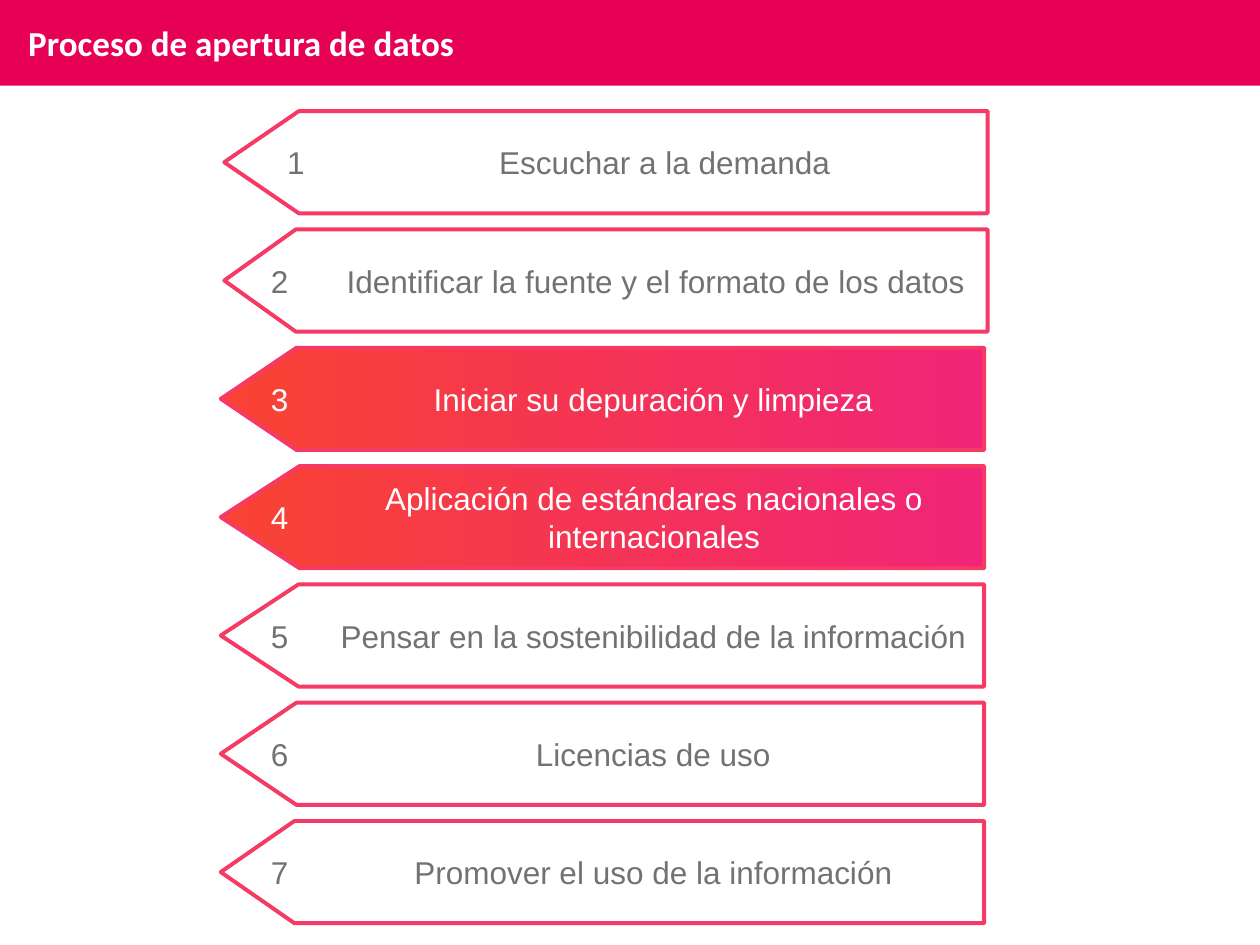
import pptx
import pptx.dml.color
import pptx.enum.shapes
import pptx.enum.text
import pptx.util

Cm = pptx.util.Cm
Pt = pptx.util.Pt
SHAPE = pptx.enum.shapes.MSO_SHAPE
ALIGN = pptx.enum.text.PP_ALIGN
ANCHOR = pptx.enum.text.MSO_ANCHOR
AUTO = pptx.enum.text.MSO_AUTO_SIZE


def rgb(value):
    return pptx.dml.color.RGBColor.from_string(value)


def write(tf, text, size=18, font="Arial", color="767171", bold=False, align=ALIGN.LEFT):
    p = tf.paragraphs[0]
    p.alignment = align
    r = p.add_run()
    r.text = text
    r.font.size = Pt(size)
    r.font.name = font
    r.font.bold = bold
    r.font.color.rgb = rgb(color)


class Deck:
    banner_fill = "E60154"
    outline = "F63A66"
    gradient = ("F02577", "F94333")
    light = "FFFFFF"
    grey = "767171"
    arrow_width, arrow_height = 15.39, 2.06
    first_top, pitch = 2.24, 2.385
    line_height = 0.77

    def __init__(self, prs):
        self.slide = prs.slides.add_slide(prs.slide_layouts[6])

    def shape(self, kind, left, top, width, height):
        sp = self.slide.shapes.add_shape(kind, Cm(left), Cm(top), Cm(width), Cm(height))
        sp.shadow.inherit = False
        return sp

    def text(self, text, left, top, width, height, wrap=True, inset=0, anchor=ANCHOR.MIDDLE, **style):
        sp = self.slide.shapes.add_textbox(Cm(left), Cm(top), Cm(width), Cm(height))
        tf = sp.text_frame
        tf.word_wrap = wrap
        tf.auto_size = AUTO.SHAPE_TO_FIT_TEXT
        tf.vertical_anchor = anchor
        tf.margin_left = tf.margin_right = Cm(inset)
        tf.margin_top = tf.margin_bottom = Cm(inset / 2)
        write(tf, text, **style)

    def banner(self, title):
        sp = self.shape(SHAPE.RECTANGLE, 0, 0, 25.4, 1.73)
        sp.fill.solid()
        sp.fill.fore_color.rgb = rgb(self.banner_fill)
        sp.line.fill.background()
        self.text(title, 0.32, 0.3, 14.68, 1.11, inset=0.25, anchor=ANCHOR.TOP,
                  size=20, font="Calibri", color=self.light, bold=True)

    def arrow(self, left, top, point, active):
        sp = self.shape(SHAPE.PENTAGON, left, top, self.arrow_width, self.arrow_height)
        sp.rotation = 180
        sp.adjustments[0] = point
        sp.line.color.rgb = rgb(self.outline)
        sp.line.width = Pt(2.25)
        if active:
            sp.fill.gradient()
            sp.fill.gradient_angle = 0
            for stop, color in zip(sp.fill.gradient_stops, self.gradient):
                stop.color.rgb = rgb(color)
        else:
            sp.fill.background()

    def step(self, number, label, left=4.45, point=0.74, number_left=5.46,
             label_left=6.58, label_width=13.18, lines=1, active=False):
        top = self.first_top + (number - 1) * self.pitch
        middle = top + self.arrow_height / 2
        color = self.light if active else self.grey
        height = self.line_height
        self.arrow(left, top, point, active)
        self.text(str(number), number_left, middle - height / 2, 0.36, height,
                  wrap=False, color=color)
        self.text(label, label_left, middle - lines * height / 2, label_width,
                  lines * height, color=color, align=ALIGN.CENTER)


def main():
    prs = pptx.Presentation()
    prs.slide_width, prs.slide_height = Cm(25.4), Cm(19.05)
    s = Deck(prs)
    s.banner("Proceso de apertura de datos")
    steps = [
        ("Escuchar a la demanda",
         dict(left=4.52, point=0.73, number_left=5.79, label_left=6.81)),
        ("Identificar la fuente y el formato de los datos",
         dict(left=4.52, point=0.7, label_left=6.63)),
        ("Iniciar su depuración y limpieza", dict(active=True)),
        ("Aplicación de estándares nacionales o internacionales",
         dict(point=0.77, label_left=6.81, label_width=12.75, lines=2, active=True)),
        ("Pensar en la sostenibilidad de la información", dict(point=0.76)),
        ("Licencias de uso", {}),
        ("Promover el uso de la información", dict(point=0.72)),
    ]
    for number, (label, options) in enumerate(steps, 1):
        s.step(number, label, **options)
    prs.save("out.pptx")


if __name__ == "__main__":
    main()
